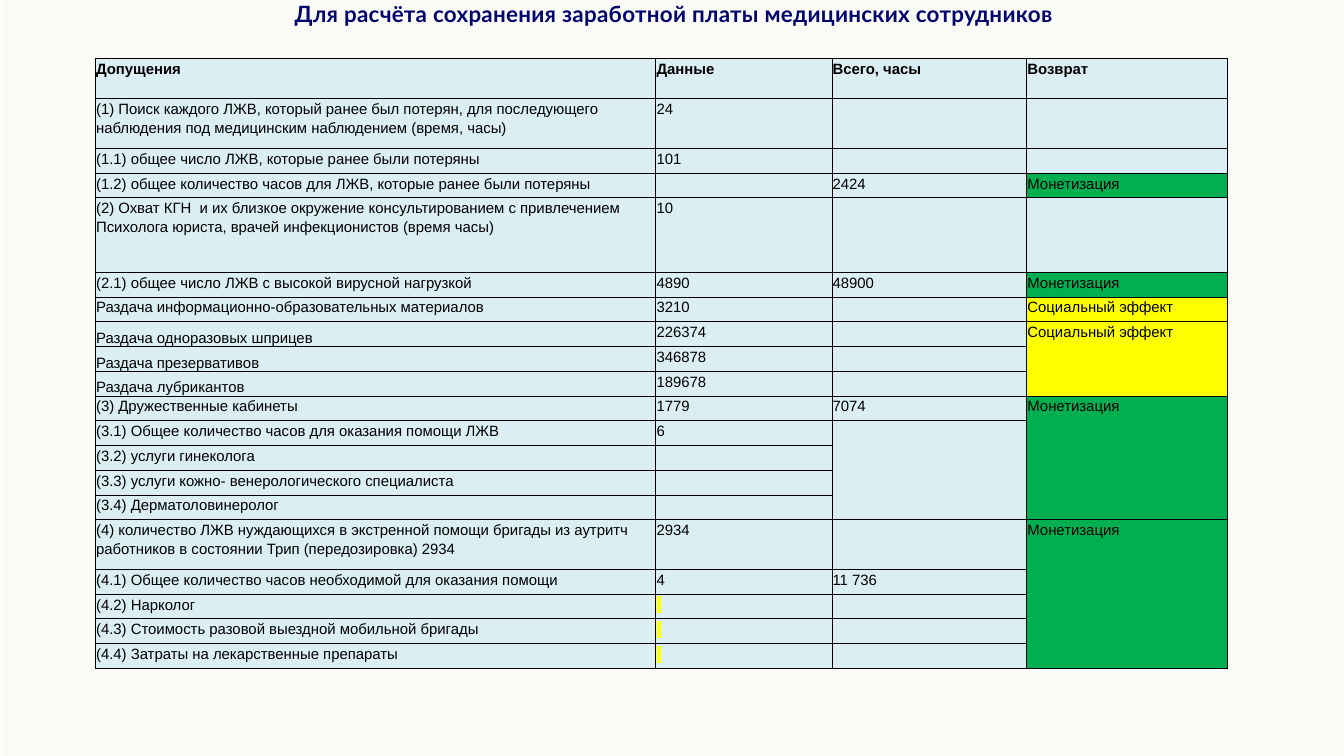
from dataclasses import dataclass
from lxml.etree import SubElement
from pptx import Presentation
from pptx.dml.color import RGBColor
from pptx.enum.text import MSO_ANCHOR, PP_ALIGN
from pptx.oxml import parse_xml
from pptx.oxml.ns import nsdecls, qn
from pptx.util import Inches, Pt


@dataclass(frozen=True)
class Theme:
    page: str = "FAFAF7"
    title: str = "04056D"
    text: str = "000000"
    cell: str = "DBEEF4"
    money: str = "00B050"
    social: str = "FFFF00"
    title_size: int = 24
    cell_size: int = 16
    title_font: str = "Lato"
    cell_font: str = "Arial"


theme = Theme()
MONEY, SOCIAL = "Монетизация", "Социальный эффект"
MARK = " "
fills = {MONEY: theme.money, SOCIAL: theme.social}

rows = [
    ("Допущения", "Данные", "Всего, часы", "Возврат"),
    ("(1) Поиск каждого ЛЖВ, который ранее был потерян, для последующего "
     "наблюдения под медицинским наблюдением (время, часы)", "24", "", ""),
    ("(1.1) общее число ЛЖВ, которые ранее были потеряны", "101", "", ""),
    ("(1.2) общее количество часов для ЛЖВ, которые ранее были потеряны", "", "2424", MONEY),
    ("(2) Охват КГН  и их близкое окружение консультированием с привлечением\n"
     "Психолога юриста, врачей инфекционистов (время часы)", "10", "", ""),
    ("(2.1) общее число ЛЖВ с высокой вирусной нагрузкой", "4890", "48900", MONEY),
    ("Раздача информационно-образовательных материалов", "3210", "", SOCIAL),
    ("Раздача одноразовых шприцев", "226374", "", SOCIAL),
    ("Раздача презервативов", "346878", "", ""),
    ("Раздача лубрикантов", "189678", "", ""),
    ("(3) Дружественные кабинеты", "1779", "7074", MONEY),
    ("(3.1) Общее количество часов для оказания помощи ЛЖВ", "6", "", ""),
    ("(3.2) услуги гинеколога", "", "", ""),
    ("(3.3) услуги кожно- венерологического специалиста", "", "", ""),
    ("(3.4) Дерматоловинеролог", "", "", ""),
    ("(4) количество ЛЖВ нуждающихся в экстренной помощи бригады из аутритч "
     "работников в состоянии Трип (передозировка) 2934", "2934", "", MONEY),
    ("(4.1) Общее количество часов необходимой для оказания помощи", "4", "11 736", ""),
    ("(4.2) Нарколог", MARK, "", ""),
    ("(4.3) Стоимость разовой выездной мобильной бригады", MARK, "", ""),
    ("(4.4) Затраты на лекарственные препараты", MARK, "", ""),
]
col_widths = [8.34, 2.62, 2.9, 2.98]
tall_rows = {1: 2, 4: 3, 15: 2}
bottom_rows = (7, 8, 9)
merges = [(7, 3, 9), (10, 3, 14), (11, 2, 14), (15, 3, 19)]
table_height, header_height = 9.08, 0.6
line_units = [tall_rows.get(i, 1) for i in range(1, len(rows))]
unit = (table_height - header_height) / sum(line_units)
row_heights = [header_height] + [unit * n for n in line_units]


def style_run(r, color, **formats):
    for name, value in formats.items():
        setattr(r.font, name, value)
    r.font.color.rgb = RGBColor.from_string(color)


def add_borders(cell):
    for i, side in enumerate(("lnL", "lnR", "lnT", "lnB")):
        cell._tc.get_or_add_tcPr().insert(i, parse_xml(
            f'<a:{side} {nsdecls("a")} w="12700"><a:solidFill>'
            f'<a:srgbClr val="{theme.text}"/></a:solidFill></a:{side}>'))


prs = Presentation()
prs.slide_width, prs.slide_height = Inches(20), Inches(11.25)
s = prs.slides.add_slide(prs.slide_layouts[6])

left, right, bottom = Inches(0.03), Inches(20.03), Inches(11.25)
outline = s.shapes.build_freeform(right, bottom)
outline.add_line_segments([(left, bottom), (left, 0), (right, 0)], close=True)
sp = outline.convert_to_shape()
sp.shadow.inherit = False
sp.fill.solid()
sp.fill.fore_color.rgb = RGBColor.from_string(theme.page)
sp.line.fill.background()
tf = sp.text_frame
frame_format = dict(margin_left=0, margin_right=0, margin_top=0, margin_bottom=0,
                    word_wrap=True, vertical_anchor=MSO_ANCHOR.TOP)
for name, value in frame_format.items():
    setattr(tf, name, value)
p = tf.paragraphs[0]
p.alignment = PP_ALIGN.CENTER
p.space_before = Pt(1.3)
r = p.add_run()
r.text = "Для расчёта сохранения заработной платы медицинских сотрудников"
style_run(r, theme.title, size=Pt(theme.title_size), name=theme.title_font, bold=True)
r.font._element.set("spc", "30")

table = s.shapes.add_table(len(rows), len(col_widths), Inches(1.42), Inches(0.87),
                           Inches(sum(col_widths)), Inches(table_height)).table
table.first_row = table.horz_banding = False
for column, width in zip(table.columns, col_widths):
    column.width = Inches(width)
for row, height in zip(table.rows, row_heights):
    row.height = Inches(height)

cell_format = dict(margin_left=Inches(0.01), margin_right=Inches(0.01),
                   margin_top=0, margin_bottom=0)
for i, values in enumerate(rows):
    for j, text in enumerate(values):
        cell = table.cell(i, j)
        for name, value in cell_format.items():
            setattr(cell, name, value)
        at_bottom = j == 0 and i in bottom_rows
        cell.vertical_anchor = MSO_ANCHOR.BOTTOM if at_bottom else MSO_ANCHOR.TOP
        cell.fill.solid()
        cell.fill.fore_color.rgb = RGBColor.from_string(fills.get(text, theme.cell))
        add_borders(cell)
        if not text:
            continue
        tf = cell.text_frame
        tf.text = text
        for p in tf.paragraphs:
            p.line_spacing = 1.15
            r = p.runs[0]
            style_run(r, theme.text, size=Pt(theme.cell_size),
                      name=theme.cell_font, bold=i == 0)
            if text == MARK:
                rPr = r.font._element
                highlight = SubElement(rPr, qn("a:highlight"))
                SubElement(highlight, qn("a:srgbClr"), val=theme.social)
                rPr.find(qn("a:latin")).addprevious(highlight)

for top, col, last in merges:
    table.cell(top, col).merge(table.cell(last, col))

prs.save("out.pptx")
